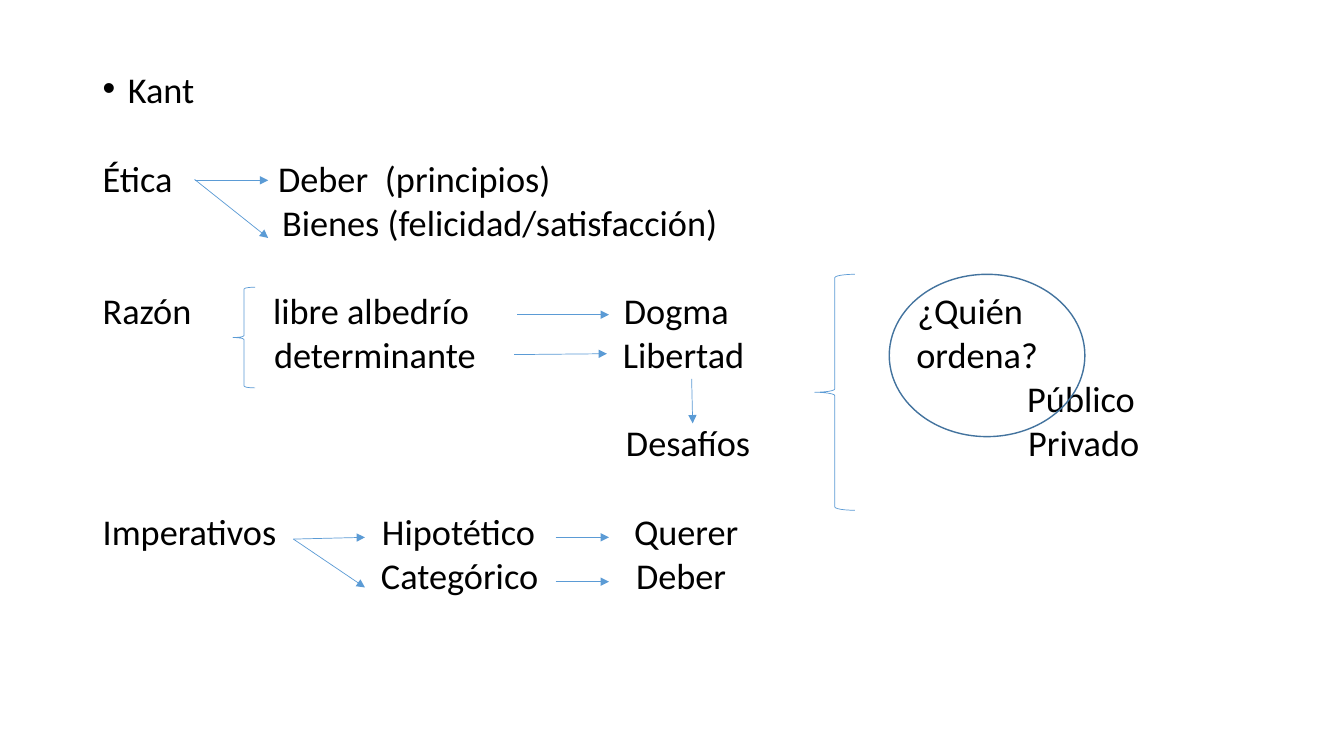
"""Build a slide that maps Kant's ethics, reason and imperatives."""
from dataclasses import dataclass

from pptx import Presentation
from pptx.dml.color import RGBColor
from pptx.enum.shapes import MSO_CONNECTOR as Connector, MSO_SHAPE as Shape
from pptx.enum.text import MSO_ANCHOR as Anchor
from pptx.oxml.ns import qn
from pptx.oxml.xmlchemy import OxmlElement
from pptx.slide import Slide
from pptx.util import Inches, Length, Pt

BLACK = RGBColor(0x00, 0x00, 0x00)
BLUE = RGBColor(0x5B, 0x9B, 0xD5)
DARK_BLUE = RGBColor(0x43, 0x73, 0x9E)
FONT, SIZE = "Calibri", Pt(25.9)
COLUMN, ROW = 1.0, 0.44
FIRST_ROW = 0.9
TEXT_COL = 1.02
LINE_SPACING, LINE_GAP, SECTION_GAP = 0.7, Pt(9.6), Pt(41.4)
BULLET_INDENT = Inches(0.25)


@dataclass(frozen=True)
class Cell:
    text: str
    col: float = TEXT_COL


@dataclass(frozen=True)
class Line:
    cells: list[Cell]
    opens_section: bool = False
    bullet: bool = False


@dataclass(frozen=True)
class Arrow:
    col: float
    row: float
    end_col: float
    end_row: float


@dataclass(frozen=True)
class Outline:
    kind: Shape
    col: float
    row: float
    cols: float
    rows: float
    color: RGBColor = BLUE
    weight: float = 0.5


LINES = [
    Line([Cell("Kant")], bullet=True),
    Line([Cell("Ética"), Cell("Deber", 2.76), Cell("(principios)", 3.82)], True),
    Line([Cell("Bienes (felicidad/satisfacción)", 2.8)]),
    Line([Cell("Razón"), Cell("libre albedrío", 2.71), Cell("Dogma", 6.19),
          Cell("¿Quién", 9.1)], True),
    Line([Cell("determinante", 2.72), Cell("Libertad", 6.18), Cell("ordena?", 9.09)]),
    Line([Cell("Público", 10.19)]),
    Line([Cell("Desafíos", 6.21), Cell("Privado", 10.2)]),
    Line([Cell("Imperativos"), Cell("Hipotético", 3.79), Cell("Querer", 6.29)], True),
    Line([Cell("Categórico", 3.78), Cell("Deber", 6.31)]),
]
ARROWS = [
    Arrow(1.93, 2.02, 2.66, 2.02),
    Arrow(1.93, 2.0, 2.66, 3.32),
    Arrow(5.13, 5.05, 6.04, 5.05),
    Arrow(5.1, 5.95, 6.02, 5.93),
    Arrow(6.86, 6.5, 6.87, 7.5),
    Arrow(2.91, 10.11, 3.62, 10.07),
    Arrow(2.91, 10.11, 3.62, 11.2),
    Arrow(5.51, 10.07, 6.04, 10.07),
    Arrow(5.51, 11.07, 6.04, 11.07),
]
OUTLINES = [
    Outline(Shape.LEFT_BRACE, 2.31, 4.43, 0.22, 2.27),
    Outline(Shape.OVAL, 8.82, 4.14, 1.94, 3.66, DARK_BLUE, 1),
    Outline(Shape.LEFT_BRACE, 8.08, 4.14, 0.4, 5.32),
]


def x_at(col: float) -> Length:
    """Return the horizontal place of a column."""
    return Inches(col * COLUMN)


def y_at(row: float) -> Length:
    """Return the vertical centre of a text row."""
    return Inches(FIRST_ROW + row * ROW)


def make_element(tag: str, **attributes: str) -> OxmlElement:
    """Return an XML element with the given attributes."""
    element = OxmlElement(tag)
    for name, value in attributes.items():
        element.set(name, value)
    return element


def add_text(slide: Slide, lines: list[Line]) -> None:
    """Write all lines in one box, with tab stops at their columns."""
    sp = slide.shapes.add_textbox(Inches(0.92), Inches(0.73), Inches(11.5), Inches(6.02))
    tf = sp.text_frame
    tf.word_wrap = True
    tf.vertical_anchor = Anchor.TOP
    tf.margin_top = Inches(0.06)
    for i, line in enumerate(lines):
        p = tf.add_paragraph() if i else tf.paragraphs[0]
        lead = "" if line.cells[0].col == TEXT_COL else "\t"
        p.text = lead + "\t".join(cell.text for cell in line.cells)
        p.line_spacing = LINE_SPACING
        if i:
            p.space_before = SECTION_GAP if line.opens_section else LINE_GAP
        props = p._p.get_or_add_pPr()
        if line.bullet:
            props.set("marL", str(BULLET_INDENT))
            props.set("indent", str(-BULLET_INDENT))
            props.append(make_element("a:buFont", typeface="Arial"))
            props.append(make_element("a:buChar", char="•"))
        stops = [cell.col for cell in line.cells if cell.col > TEXT_COL]
        if stops:
            tabs = make_element("a:tabLst")
            for col in stops:
                tabs.append(make_element("a:tab", pos=str(x_at(col - TEXT_COL)), algn="l"))
            props.append(tabs)
        font = p.runs[0].font
        font.name, font.size = FONT, SIZE
        font.color.rgb = BLACK


def add_arrow(slide: Slide, arrow: Arrow) -> None:
    """Draw one thin arrow between two grid points."""
    line = slide.shapes.add_connector(
        Connector.STRAIGHT, x_at(arrow.col), y_at(arrow.row),
        x_at(arrow.end_col), y_at(arrow.end_row))
    line.line.color.rgb = BLUE
    line.line.width = Pt(0.5)
    props = line._element.spPr
    props.find(qn("a:ln")).append(make_element("a:tailEnd", type="triangle"))
    props.append(make_element("a:effectLst"))


def add_outline(slide: Slide, outline: Outline) -> None:
    """Draw one unfilled brace or ellipse."""
    sp = slide.shapes.add_shape(
        outline.kind, x_at(outline.col), y_at(outline.row),
        x_at(outline.cols), Inches(outline.rows * ROW))
    sp.shadow.inherit = False
    sp.fill.background()
    sp.line.color.rgb = outline.color
    sp.line.width = Pt(outline.weight)


def main() -> None:
    """Build and save the slide."""
    prs = Presentation()
    prs.slide_width, prs.slide_height = Inches(13.33), Inches(7.5)
    slide = prs.slides.add_slide(prs.slide_layouts[6])
    add_text(slide, LINES)
    for arrow in ARROWS:
        add_arrow(slide, arrow)
    for outline in OUTLINES:
        add_outline(slide, outline)
    prs.save("out.pptx")


if __name__ == "__main__":
    main()
